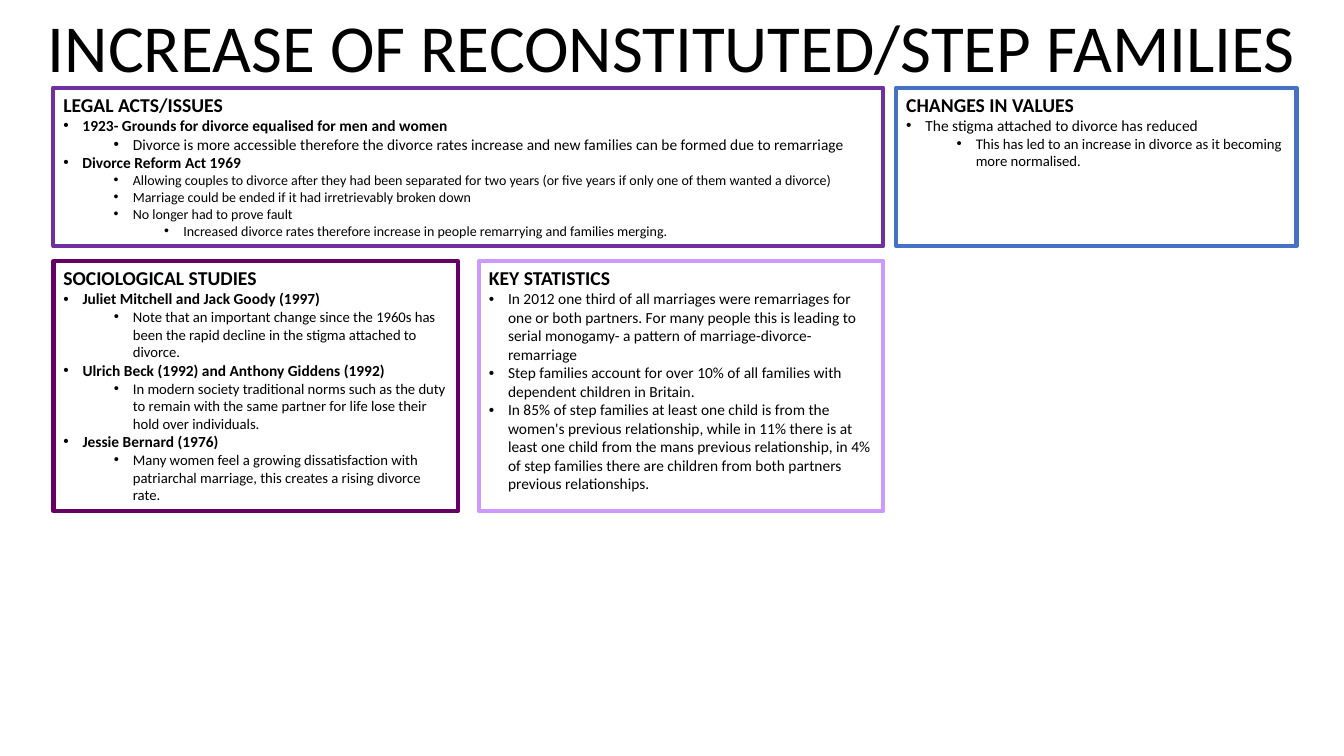
from dataclasses import dataclass
from typing import Any, NamedTuple

from lxml.etree import SubElement
from pptx import Presentation
from pptx.dml.color import RGBColor
from pptx.enum.shapes import MSO_SHAPE
from pptx.enum.text import MSO_ANCHOR, MSO_AUTO_SIZE, PP_ALIGN
from pptx.oxml.ns import qn
from pptx.util import Inches, Pt

COLORS = {
    "text": "000000",
    "legal": "7030A0",
    "studies": "660066",
    "statistics": "CC99FF",
    "values": "4472C4",
}
FONT = "Calibri"
SLIDE_WIDTH, SLIDE_HEIGHT = 13.33, 7.5
HANG, INDENT_STEP = 0.19, 0.5


class Band(NamedTuple):
    """One grid column or row, in inches."""
    start: float
    size: float

    @property
    def end(self) -> float:
        return self.start + self.size


class Point(NamedTuple):
    text: str
    level: int = 0
    size: float = 11
    bold: bool = False


@dataclass(frozen=True)
class Panel:
    heading: str
    color: str
    first: Band
    last: Band
    row: Band
    points: tuple[Point, ...]


# Grid
LEFT, MIDDLE, RIGHT = Band(0.53, 4.01), Band(4.75, 4.01), Band(8.89, 3.97)
TITLE_ROW, TOP, BOTTOM = Band(0, 0.91), Band(0.87, 1.57), Band(2.59, 2.48)

# Content
TITLE = "INCREASE OF RECONSTITUTED/STEP FAMILIES"
PANELS = (
    Panel("LEGAL ACTS/ISSUES", "legal", LEFT, MIDDLE, TOP, (
        Point("1923- Grounds for divorce equalised for men and women", bold=True),
        Point("Divorce is more accessible therefore the divorce rates increase "
              "and new families can be formed due to remarriage", 1),
        Point("Divorce Reform Act 1969", bold=True),
        Point("Allowing couples to divorce after they had been separated for two "
              "years (or five years if only one of them wanted a divorce)", 1, 10),
        Point("Marriage could be ended if it had irretrievably broken down", 1, 10),
        Point("No longer had to prove fault", 1, 10),
        Point("Increased divorce rates therefore increase in people remarrying "
              "and families merging.", 2, 10),
    )),
    Panel("SOCIOLOGICAL STUDIES", "studies", LEFT, LEFT, BOTTOM, (
        Point("Juliet Mitchell and Jack Goody (1997)", bold=True),
        Point("Note that an important change since the 1960s has been the rapid "
              "decline in the stigma attached to divorce.", 1, 10.5),
        Point("Ulrich Beck (1992) and Anthony Giddens (1992)", bold=True),
        Point("In modern society traditional norms such as the duty to remain with "
              "the same partner for life lose their hold over individuals.", 1, 10.5),
        Point("Jessie Bernard (1976)", bold=True),
        Point("Many women feel a growing dissatisfaction with patriarchal "
              "marriage, this creates a rising divorce rate.", 1, 10.5),
    )),
    Panel("KEY STATISTICS", "statistics", MIDDLE, MIDDLE, BOTTOM, (
        Point("In 2012 one third of all marriages were remarriages for one or both "
              "partners. For many people this is leading to serial monogamy- a "
              "pattern of marriage-divorce-remarriage"),
        Point("Step families account for over 10% of all families with dependent "
              "children in Britain."),
        Point("In 85% of step families at least one child is from the women's "
              "previous relationship, while in 11% there is at least one child from "
              "the mans previous relationship, in 4% of step families there are "
              "children from both partners previous relationships."),
    )),
    Panel("CHANGES IN VALUES", "values", RIGHT, RIGHT, TOP, (
        Point("The stigma attached to divorce has reduced"),
        Point("This has led to an increase in divorce as it becoming more "
              "normalised.", 1, 10.5),
    )),
)

# Shared formats
FRAME_FORMAT = {
    "word_wrap": True,
    "auto_size": MSO_AUTO_SIZE.SHAPE_TO_FIT_TEXT,
    "vertical_anchor": MSO_ANCHOR.TOP,
    "margin_left": Inches(0.1),
    "margin_right": Inches(0.1),
    "margin_top": Inches(0.05),
    "margin_bottom": Inches(0.05),
}


def apply(target: Any, values: dict[str, Any]) -> None:
    for attribute, value in values.items():
        setattr(target, attribute, value)


def write(paragraph: Any, text: str, size: float, bold: bool, align: PP_ALIGN) -> None:
    paragraph.text = text
    paragraph.alignment = align
    font = paragraph.runs[0].font
    apply(font, {"name": FONT, "size": Pt(size), "bold": bold})
    font.color.rgb = RGBColor.from_string(COLORS["text"])


def add_bullet(paragraph: Any, level: int) -> None:
    paragraph.level = level
    properties = paragraph._p.get_or_add_pPr()
    properties.set("marL", str(Inches(HANG + level * INDENT_STEP)))
    properties.set("indent", str(-Inches(HANG)))
    SubElement(properties, qn("a:buFont"), typeface="Arial")
    SubElement(properties, qn("a:buChar"), char="•")


def draw_title(slide: Any) -> None:
    title = slide.shapes.title
    apply(title, {"left": 0, "top": Inches(TITLE_ROW.start),
                  "width": Inches(SLIDE_WIDTH), "height": Inches(TITLE_ROW.size)})
    apply(title.text_frame, FRAME_FORMAT)
    write(title.text_frame.paragraphs[0], TITLE, 48, False, PP_ALIGN.CENTER)


def draw_panel(slide: Any, panel: Panel) -> None:
    box = slide.shapes.add_shape(
        MSO_SHAPE.RECTANGLE, Inches(panel.first.start), Inches(panel.row.start),
        Inches(panel.last.end - panel.first.start), Inches(panel.row.size))
    box.shadow.inherit = False
    box.fill.background()
    box.line.color.rgb = RGBColor.from_string(COLORS[panel.color])
    box.line.width = Pt(3)
    frame = box.text_frame
    apply(frame, FRAME_FORMAT)
    write(frame.paragraphs[0], panel.heading, 14, True, PP_ALIGN.LEFT)
    for point in panel.points:
        paragraph = frame.add_paragraph()
        add_bullet(paragraph, point.level)
        write(paragraph, point.text, point.size, point.bold, PP_ALIGN.LEFT)


def main() -> None:
    presentation = Presentation()
    presentation.slide_width = Inches(SLIDE_WIDTH)
    presentation.slide_height = Inches(SLIDE_HEIGHT)
    slide = presentation.slides.add_slide(presentation.slide_layouts[5])
    draw_title(slide)
    for panel in PANELS:
        draw_panel(slide, panel)
    presentation.save("out.pptx")


if __name__ == "__main__":
    main()
